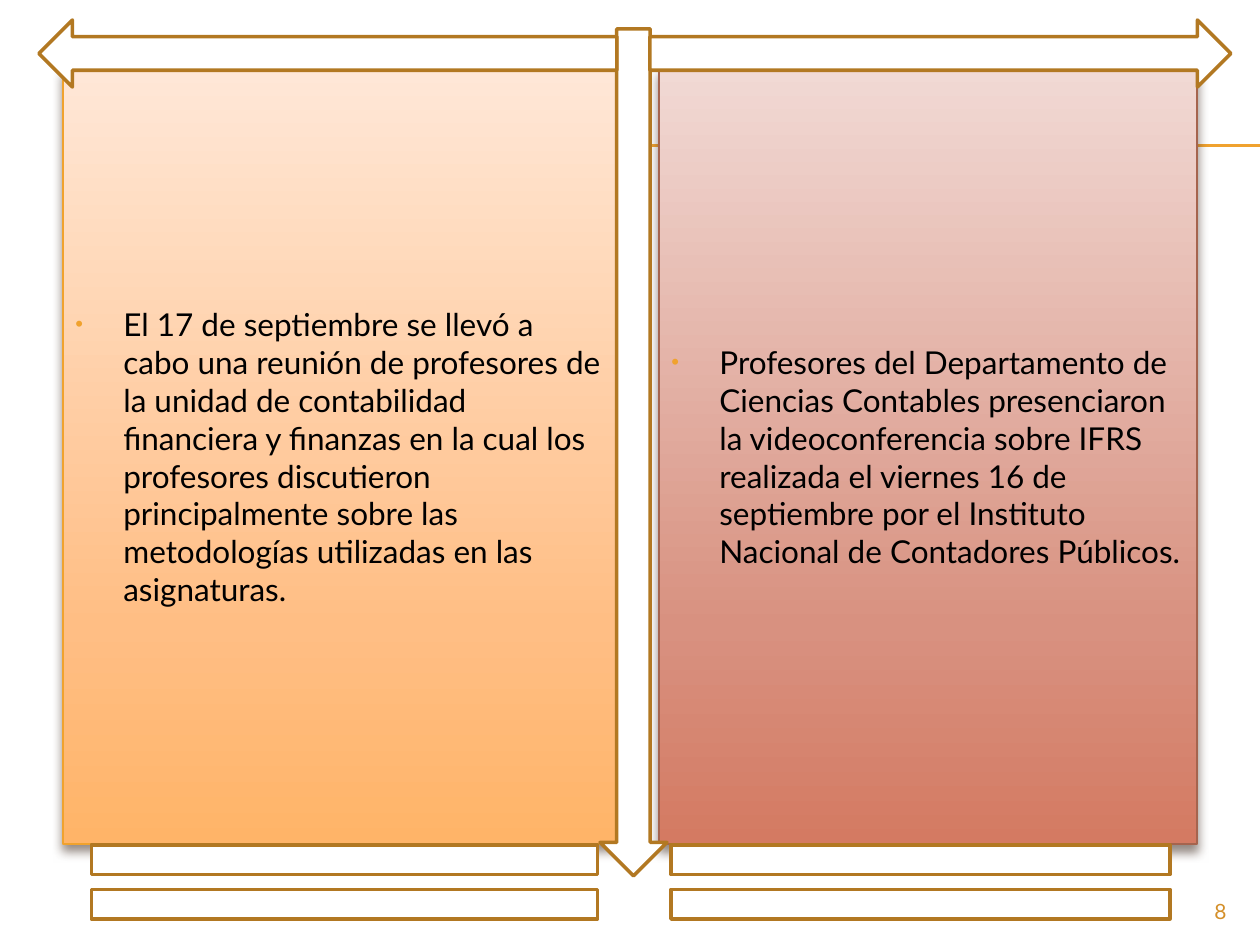
from lxml.etree import SubElement
from pptx import Presentation
from pptx.dml.color import RGBColor
from pptx.enum.shapes import MSO_CONNECTOR, MSO_SHAPE
from pptx.enum.text import MSO_ANCHOR, PP_ALIGN
from pptx.oxml.ns import qn
from pptx.util import Pt

PX = 914400 // 126
FONT = "Lato"
COLORS = {
    "white": "FFFFFF",
    "black": "000000",
    "gold": "F0A22E",
    "brown": "B27822",
    "rust": "A5644E",
    "number": "D48F29",
    "shadow": "4E3B30",
}
ORANGE_STOPS = [(0, "FFE7D7"), (72, "FFBE84"), (100, "FFB468")]
RED_STOPS = [(0, "F1D9D4"), (72, "D89180"), (100, "D47A62")]
MEETING = (
    "El 17 de septiembre se llevó a cabo una reunión de profesores de la unidad de "
    "contabilidad financiera y finanzas en la cual los profesores discutieron "
    "principalmente sobre las metodologías utilizadas en las asignaturas."
)
CONFERENCE = (
    "Profesores del Departamento de Ciencias Contables presenciaron la videoconferencia "
    "sobre IFRS realizada el viernes 16 de septiembre por el Instituto Nacional de "
    "Contadores Públicos."
)


def px(*lengths):
    return [length * PX for length in lengths]


def color(name):
    return RGBColor.from_string(COLORS[name])


def add_child(parent, tag, **attributes):
    return SubElement(parent, qn(tag), {key: str(value) for key, value in attributes.items()})


def add_rule(page, y):
    rule = page.shapes.add_connector(MSO_CONNECTOR.STRAIGHT, *px(71, y, 1260, y))
    rule.line.color.rgb = color("gold")
    rule.line.width = Pt(0.75)
    add_child(rule._element.spPr, "a:effectLst")


def add_outlined(page, kind, place, line="brown", width=2):
    shape = page.shapes.add_shape(kind, *px(*place))
    shape.fill.solid()
    shape.fill.fore_color.rgb = color("white")
    shape.line.color.rgb = color(line)
    shape.line.width = Pt(width)
    shape.shadow.inherit = False
    return shape


def fill_gradient(shape, stops):
    shape.fill.gradient()
    shape.fill.gradient_angle = 270
    stop_list = shape._element.spPr.find(qn("a:gradFill")).find(qn("a:gsLst"))
    for old_stop in list(stop_list):
        stop_list.remove(old_stop)
    for percent, value in stops:
        stop = add_child(stop_list, "a:gs", pos=percent * 1000)
        add_child(stop, "a:srgbClr", val=value)


def add_shadow(shape):
    effects = shape._element.spPr.find(qn("a:effectLst"))
    shadow = add_child(effects, "a:outerShdw", blurRad=Pt(6), dist=Pt(4),
                       dir=5400000, algn="ctr", rotWithShape=0)
    tint = add_child(shadow, "a:srgbClr", val=COLORS["shadow"])
    add_child(tint, "a:alpha", val=60000)


def add_bullet(para):
    properties = para._p.get_or_add_pPr()
    properties.set("marL", str(48 * PX))
    properties.set("indent", str(-48 * PX))
    bullet_color = add_child(properties, "a:buClr")
    add_child(bullet_color, "a:srgbClr", val=COLORS["gold"])
    add_child(properties, "a:buSzPct", val=70000)
    add_child(properties, "a:buFont", typeface="Arial")
    add_child(properties, "a:buChar", char="•")


def write(box, text, size, ink, align=PP_ALIGN.LEFT, anchor=MSO_ANCHOR.TOP, bullet=False):
    frame = box.text_frame
    frame.word_wrap = True
    frame.vertical_anchor = anchor
    para = frame.paragraphs[0]
    para.alignment = align
    if bullet:
        add_bullet(para)
    span = para.add_run()
    span.text = text
    span.font.name = FONT
    span.font.size = Pt(size)
    span.font.color.rgb = color(ink)


def add_panel(page, text, place, stops, line):
    panel = add_outlined(page, MSO_SHAPE.RECTANGLE, place, line, 0.79)
    fill_gradient(panel, stops)
    add_shadow(panel)
    write(panel, text, 18, "black", anchor=MSO_ANCHOR.MIDDLE, bullet=True)


def add_page_number(page, number):
    box = page.shapes.add_textbox(*px(1134, 892, 105, 34))
    write(box, number, 12, "number", align=PP_ALIGN.RIGHT)


def main():
    deck = Presentation()
    deck.slide_width, deck.slide_height = px(1260, 945)
    page = deck.slides.add_slide(deck.slide_layouts[6])

    for y in (145, 146):
        add_rule(page, y)
    add_panel(page, MEETING, (63, 69, 557, 775), ORANGE_STOPS, "gold")
    add_panel(page, CONFERENCE, (659, 69, 538, 775), RED_STOPS, "rust")

    for kind, place in (
        (MSO_SHAPE.DOWN_ARROW, (600, 29, 67, 847)),
        (MSO_SHAPE.RIGHT_ARROW, (650, 20, 581, 67)),
        (MSO_SHAPE.LEFT_ARROW, (39, 20, 578, 67)),
        (MSO_SHAPE.MATH_EQUAL, (0, 819, 689, 126)),
        (MSO_SHAPE.MATH_EQUAL, (581, 819, 679, 126)),
    ):
        add_outlined(page, kind, place)
    add_page_number(page, "8")

    deck.save("out.pptx")


if __name__ == "__main__":
    main()
